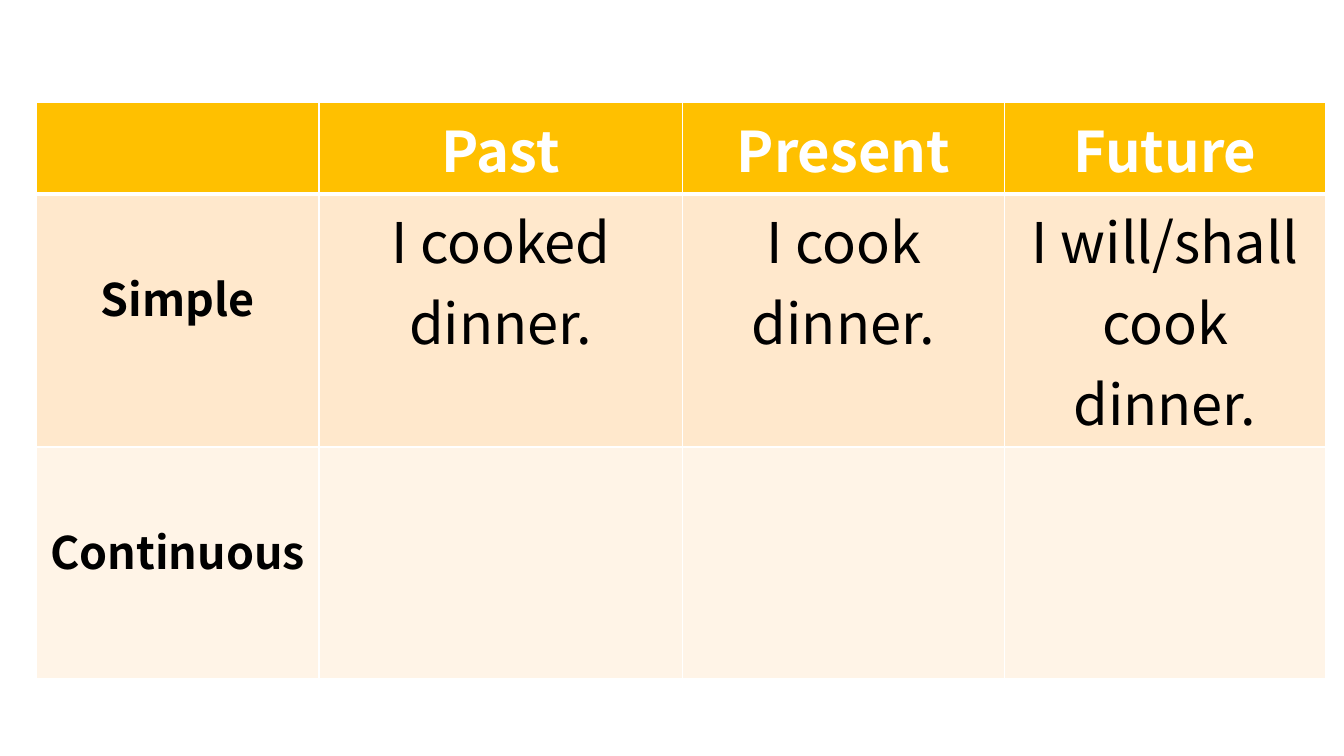
from lxml.etree import SubElement
from pptx import Presentation
from pptx.dml.color import RGBColor as RGB
from pptx.enum.text import PP_ALIGN as Align
from pptx.oxml.ns import qn
from pptx.util import Pt

COLORS = {
    "header": "FFC000",
    "simple": "FFE8CC",
    "continuous": "FFF4E7",
    "white": "FFFFFF",
    "black": "000000",
}
COLUMN_WIDTHS = [201.6, 259.9, 229.7, 229.7]
ROW_HEIGHTS = [64.4, 180, 165.6]
TENSES = [
    ("header", ["", "Past", "Present", "Future"]),
    ("simple", ["Simple", "I cooked dinner.", "I cook dinner.",
                "I will/shall cook dinner."]),
    ("continuous", ["Continuous", "", "", ""]),
]
LABEL_TOP = 50  # one 32 pt line below the usual cell margin


class TenseSlide:
    font = "Noto Sans CJK JP"
    label_size = 32
    text_size = 40

    def __init__(self, slide):
        self.slide = slide

    def table(self, left, top, widths, heights, rows):
        frame = self.slide.shapes.add_table(
            len(rows), len(widths), Pt(left), Pt(top),
            Pt(sum(widths)), Pt(sum(heights)))
        grid = frame.table
        for column, width in zip(grid.columns, widths):
            column.width = Pt(width)
        for row, height in zip(grid.rows, heights):
            row.height = Pt(height)
        for r, (fill, texts) in enumerate(rows):
            for c, text in enumerate(texts):
                cell = grid.cell(r, c)
                self.borders(cell, top=3 if r == 1 else 1,
                             bottom=3 if r == 0 else 1)
                cell.fill.solid()
                cell.fill.fore_color.rgb = RGB.from_string(COLORS[fill])
                if text:
                    self.cell_text(cell, text, header=r == 0, label=c == 0)

    def cell_text(self, cell, text, header, label):
        cell.text_frame.text = text
        if label:
            cell.margin_top = Pt(LABEL_TOP)
        paragraph = cell.text_frame.paragraphs[0]
        paragraph.alignment = Align.CENTER
        font = paragraph.runs[0].font
        font.name = self.font
        font.size = Pt(self.label_size if label else self.text_size)
        font.bold = header or label
        font.color.rgb = RGB.from_string(COLORS["white" if header else "black"])

    def borders(self, cell, top, bottom):
        """Draw white cell borders; must run before the cell is filled."""
        properties = cell._tc.get_or_add_tcPr()
        for side, width in (("L", 1), ("R", 1), ("T", top), ("B", bottom)):
            line = SubElement(properties, qn(f"a:ln{side}"), w=str(Pt(width)))
            SubElement(SubElement(line, qn("a:solidFill")),
                       qn("a:srgbClr"), val=COLORS["white"])


def main():
    deck = Presentation()
    deck.slide_width, deck.slide_height = Pt(960), Pt(540)
    page = TenseSlide(deck.slides.add_slide(deck.slide_layouts[6]))
    page.table(26.2, 73.5, COLUMN_WIDTHS, ROW_HEIGHTS, TENSES)
    deck.save("out.pptx")


if __name__ == "__main__":
    main()
